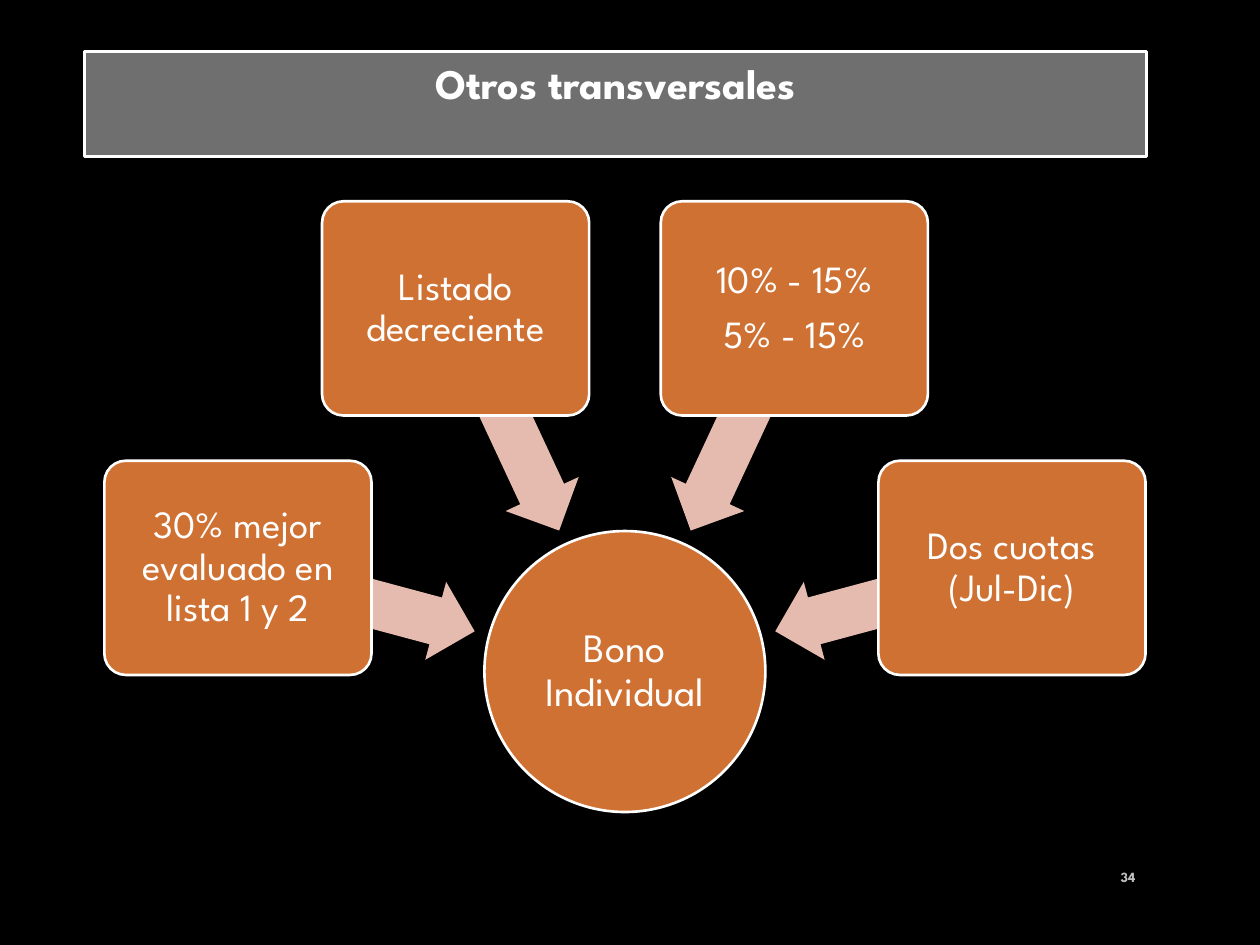
from dataclasses import dataclass
from math import cos, radians, sin

from pptx import Presentation
from pptx.dml.color import RGBColor
from pptx.enum.shapes import MSO_SHAPE
from pptx.enum.text import MSO_ANCHOR, MSO_AUTO_SIZE, PP_ALIGN
from pptx.util import Inches, Pt

CIRCLE = MSO_SHAPE.OVAL
CARD = MSO_SHAPE.ROUNDED_RECTANGLE
ARROW = MSO_SHAPE.LEFT_ARROW
CENTER, RIGHT = PP_ALIGN.CENTER, PP_ALIGN.RIGHT
TOP, MIDDLE = MSO_ANCHOR.TOP, MSO_ANCHOR.MIDDLE
TITLE_ONLY = 5


@dataclass(frozen=True)
class Theme:
    font: str = "League Spartan"
    background: str = "000000"
    banner: str = "6F6F6F"
    accent: str = "CF7133"
    arrow: str = "E4BBAE"
    light: str = "FFFFFF"
    muted: str = "BFBFBF"
    title_size: float = 24
    hub_size: float = 23
    card_size: float = 22
    number_size: float = 8


THEME = Theme()

# Radial layout in inches: everything is placed around the hub's centre
HUB = (4.96, 5.33)
HUB_SIZE = (2.23, 2.23)
CARD_SIZE, CARD_RADIUS = (2.12, 1.7), 3.18
ARROW_SIZE, ARROW_RADIUS = (1.95, 0.64), 2.21
FIRST_ANGLE, ANGLE_STEP = 195, 50

CARDS = [
    ["30% mejor evaluado en lista 1 y 2"],
    ["Listado decreciente"],
    ["10% - 15%", "5% - 15%"],
    ["Dos cuotas (Jul-Dic)"],
]


def color(value):
    return RGBColor.from_string(value)


def paint(shape, fill, line_width=0):
    shape.shadow.inherit = False
    shape.fill.solid()
    shape.fill.fore_color.rgb = color(fill)
    if line_width:
        shape.line.color.rgb = color(THEME.light)
        shape.line.width = Pt(line_width)
    else:
        shape.line.fill.background()


def write(shape, lines, size, text_color=THEME.light, bold=False,
          align=CENTER, anchor=MIDDLE):
    frame = shape.text_frame
    frame.word_wrap = True
    frame.vertical_anchor = anchor
    for index, line in enumerate(lines):
        paragraph = frame.add_paragraph() if index else frame.paragraphs[0]
        paragraph.alignment = align
        run = paragraph.add_run()
        run.text = line
        run.font.name = THEME.font
        run.font.size = Pt(size)
        run.font.bold = bold
        run.font.color.rgb = color(text_color)
    return frame


def add_centered(slide, kind, center, size):
    left, top = (middle - length / 2 for middle, length in zip(center, size))
    return slide.shapes.add_shape(kind, *map(Inches, (left, top, *size)))


def around_hub(angle, radius):
    return (HUB[0] + radius * cos(radians(angle)),
            HUB[1] + radius * sin(radians(angle)))


def add_node(slide, kind, center, size, lines, text_size, inset):
    node = add_centered(slide, kind, center, size)
    paint(node, THEME.accent, 1.5)
    frame = write(node, lines, text_size)
    frame.margin_left = frame.margin_right = Inches(inset)
    frame.margin_top = frame.margin_bottom = Inches(inset)
    for paragraph in frame.paragraphs:
        paragraph.line_spacing = 0.9
        paragraph.space_after = Pt(round(0.35 * text_size, 1))
    return node


def add_arrow(slide, angle):
    arrow = add_centered(slide, ARROW, around_hub(angle, ARROW_RADIUS), ARROW_SIZE)
    arrow.rotation = angle
    arrow.adjustments[0] = 0.6
    arrow.adjustments[1] = 0.5
    paint(arrow, THEME.arrow)


def add_banner(slide):
    title = slide.shapes.title
    title.left, title.top = Inches(0.67), Inches(0.41)
    title.width, title.height = Inches(8.43), Inches(0.5)
    paint(title, THEME.banner, 2)
    frame = write(title, ["Otros transversales"], THEME.title_size,
                  bold=True, anchor=TOP)
    frame.auto_size = MSO_AUTO_SIZE.SHAPE_TO_FIT_TEXT


def add_page_number(slide):
    box = slide.shapes.add_textbox(*map(Inches, (8.66, 6.76, 0.45, 0.4)))
    write(box, ["34"], THEME.number_size, THEME.muted, bold=True, align=RIGHT)


def main():
    presentation = Presentation()
    presentation.slide_width, presentation.slide_height = Inches(10), Inches(7.5)
    slide = presentation.slides.add_slide(presentation.slide_layouts[TITLE_ONLY])
    slide.background.fill.solid()
    slide.background.fill.fore_color.rgb = color(THEME.background)

    add_page_number(slide)
    add_banner(slide)

    # Hub, then each arrow with the card that covers its tail
    add_node(slide, CIRCLE, HUB, HUB_SIZE, ["Bono Individual"], THEME.hub_size, 0.02)
    for index, lines in enumerate(CARDS):
        angle = FIRST_ANGLE + index * ANGLE_STEP
        add_arrow(slide, angle)
        card = add_node(slide, CARD, around_hub(angle, CARD_RADIUS), CARD_SIZE,
                        lines, THEME.card_size, 0.05)
        card.adjustments[0] = 0.1

    presentation.save("out.pptx")


if __name__ == "__main__":
    main()
